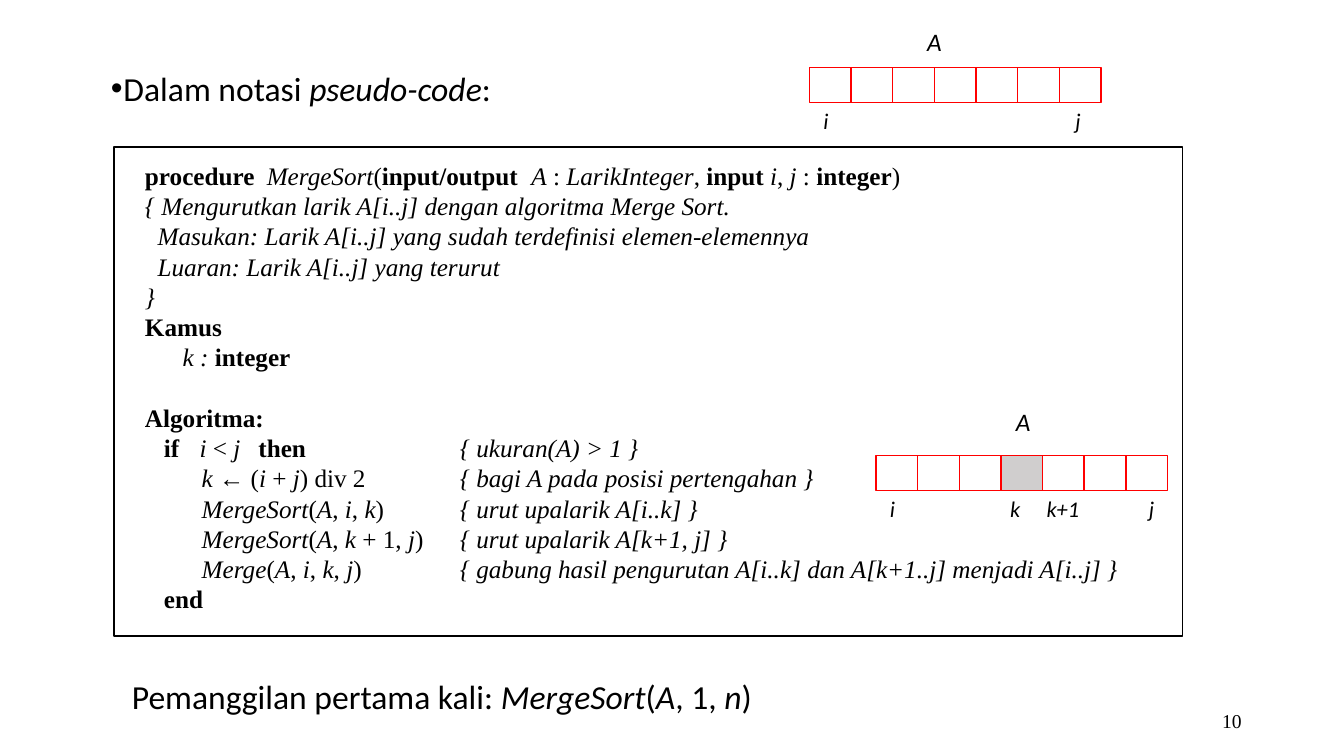
from lxml.etree import SubElement
from pptx import Presentation
from pptx.dml.color import RGBColor
from pptx.enum.shapes import MSO_SHAPE as Shape
from pptx.enum.text import MSO_ANCHOR as Anchor, MSO_AUTO_SIZE as AutoSize, PP_ALIGN as Align
from pptx.oxml.ns import qn
from pptx.util import Pt

COLORS = {"text": "000000", "cell": "FF0000", "middle": "D0CECE"}
SANS, SERIF = "Calibri", "Times New Roman"
LINE_HEIGHT = 21.6
COMMENT_TAB = 225

# Markup: * toggles italic, ^ toggles bold. Each line has its own tab stops.
CODE = [
    ("^procedure^\t*MergeSort*(^input/output^\t*A* : *LarikInteger*, "
     "^input^ *i*, *j* : ^integer^)", [87, 276]),
    ("*{ Mengurutkan larik A[i..j] dengan algoritma Merge Sort.*", []),
    ("*  Masukan: Larik A[i..j] yang sudah terdefinisi elemen-elemennya*", []),
    ("*  Luaran: Larik A[i..j] yang terurut*", []),
    ("*}*", []),
    ("^Kamus^", []),
    ("*      k : *^integer^", []),
    ("^Algoritma:^", []),
    ("   ^if^\t*i* < *j*\t^then^\t*{ ukuran(A) > 1 }*", [39, 81, COMMENT_TAB]),
    ("         *k* ← (*i* + *j*) div 2\t*{ bagi A pada posisi pertengahan }*", [COMMENT_TAB]),
    ("         *MergeSort*(*A*, *i*, *k*)\t*{ urut upalarik A[i..k] }*", [COMMENT_TAB]),
    ("         *MergeSort*(*A*, *k* + 1, *j*)\t*{ urut upalarik A[k+1, j] }*", [COMMENT_TAB]),
    ("         *Merge*(*A*, *i*, *k*, *j*)\t"
     "*{ gabung hasil pengurutan A[i..k] dan A[k+1..j] menjadi A[i..j] }*", [COMMENT_TAB]),
    ("   ^end^", []),
]


def color(name):
    return RGBColor.from_string(COLORS[name])


def add_tabs(para, stops):
    if stops:
        tabs = SubElement(para._p.get_or_add_pPr(), qn("a:tabLst"))
        for stop in stops:
            SubElement(tabs, qn("a:tab"), pos=str(Pt(stop)), algn="l")


def set_font(para, size, name):
    para.font.size = Pt(size)
    para.font.name = name
    para.font.color.rgb = color("text")


def write(para, markup):
    """Add runs to the paragraph, switching styles at the * and ^ marks."""
    italic = bold = False
    for piece in markup.replace("*", "\0*\0").replace("^", "\0^\0").split("\0"):
        if piece == "*":
            italic = not italic
        elif piece == "^":
            bold = not bold
        elif piece:
            span = para.add_run()
            span.text = piece
            if italic:
                span.font.italic = True
            if bold:
                span.font.bold = True


class SlideBuilder:
    def __init__(self, deck):
        self.page = deck.slides.add_slide(deck.slide_layouts[1])
        title = self.page.shapes.title._element
        title.getparent().remove(title)

    def bullet(self, left, top, width, height, markup):
        body = self.page.placeholders[1]
        body.left, body.top, body.width, body.height = map(Pt, (left, top, width, height))
        body.text_frame.auto_size = AutoSize.NONE
        para = body.text_frame.paragraphs[0]
        para.line_spacing = 0.9
        para.space_before = Pt(0)
        props = para._p.get_or_add_pPr()
        props.set("marL", str(Pt(9)))
        props.set("indent", str(Pt(-9)))
        SubElement(props, qn("a:buFont"), typeface="Arial")
        SubElement(props, qn("a:buChar"), char="•")
        set_font(para, 24, SANS)
        write(para, markup)

    def text_box(self, left, top, width, height):
        box = self.page.shapes.add_textbox(Pt(left), Pt(top), Pt(width), Pt(height))
        box.text_frame.word_wrap = True
        return box.text_frame

    def label(self, left, top, width, height, markup, size, stops=()):
        para = self.text_box(left, top, width, height).paragraphs[0]
        add_tabs(para, stops)
        set_font(para, size, SANS)
        write(para, markup)

    def code(self, left, top, width, height, lines):
        frame = self.text_box(left, top, width, height)
        for index, (markup, stops) in enumerate(lines):
            para = frame.add_paragraph() if index else frame.paragraphs[0]
            para.line_spacing = Pt(LINE_HEIGHT)
            if markup == "^Algoritma:^":
                para.space_before = Pt(LINE_HEIGHT)
            add_tabs(para, stops)
            set_font(para, 18, SERIF)
            write(para, markup)

    def rectangle(self, left, top, width, height, line, fill=None):
        shape = self.page.shapes.add_shape(
            Shape.RECTANGLE, Pt(left), Pt(top), Pt(width), Pt(height))
        shape.shadow.inherit = False
        shape.line.color.rgb = color(line)
        shape.line.width = Pt(1)
        if fill:
            shape.fill.solid()
            shape.fill.fore_color.rgb = color(fill)
        else:
            shape.fill.background()

    def array(self, left, top, middle=None, count=7, cell_width=29.75, cell_height=25.2):
        for index in range(count):
            self.rectangle(left + index * cell_width, top, cell_width, cell_height,
                           "cell", "middle" if index == middle else None)

    def slide_number(self, left, top, width, height, number):
        frame = self.text_box(left, top, width, height)
        frame.vertical_anchor = Anchor.MIDDLE
        para = frame.paragraphs[0]
        para.alignment = Align.RIGHT
        set_font(para, 14, SERIF)
        span = para.add_run()
        span.text = number


def main():
    deck = Presentation()
    deck.slide_width, deck.slide_height = Pt(960), Pt(540)
    slide = SlideBuilder(deck)

    slide.slide_number(678, 500.4, 216, 28.8, "10")
    slide.bullet(72, 48, 816, 432, "Dalam notasi *pseudo-code*:")
    slide.code(96.5, 110.9, 748, 334, CODE)
    slide.rectangle(81.4, 105.1, 763.2, 349.2, "text")
    slide.label(87.1, 479.5, 461.5, 36, "Pemanggilan pertama kali: *MergeSort*(*A*, 1, *n*)", 24)

    slide.array(625.7, 325.4, middle=3)
    slide.label(628.5, 350, 210, 26.6, "*i\tk\tk+1\tj*", 16, [86, 112, 185])
    slide.label(718.6, 286.6, 25.2, 28.8, "*A*", 18)

    slide.array(578.2, 48.2)
    slide.label(581, 72.7, 210, 26.6, "*i\tj*", 16, [180])
    slide.label(655.2, 15.1, 25.2, 28.8, "*A*", 18)

    deck.save("out.pptx")


if __name__ == "__main__":
    main()
